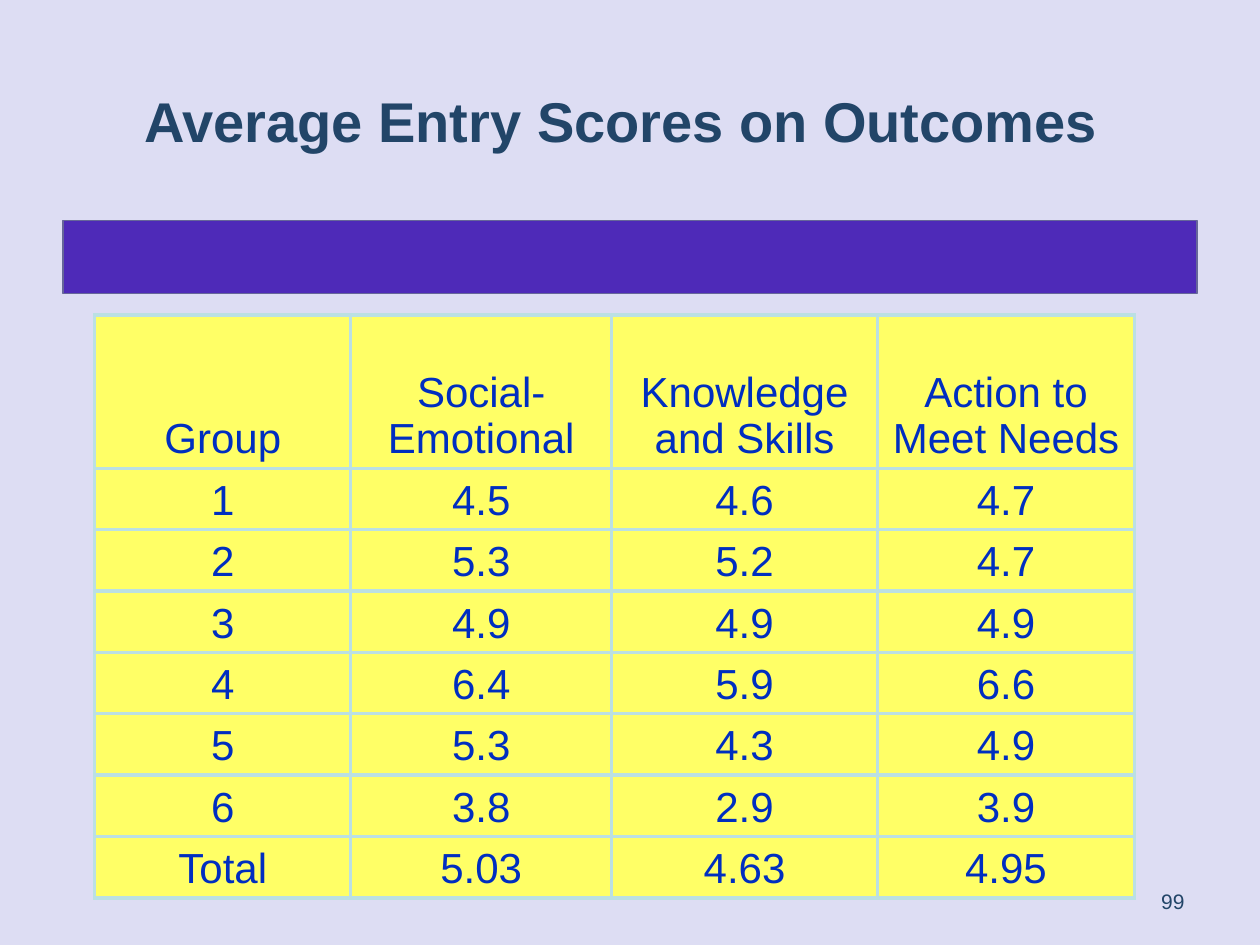
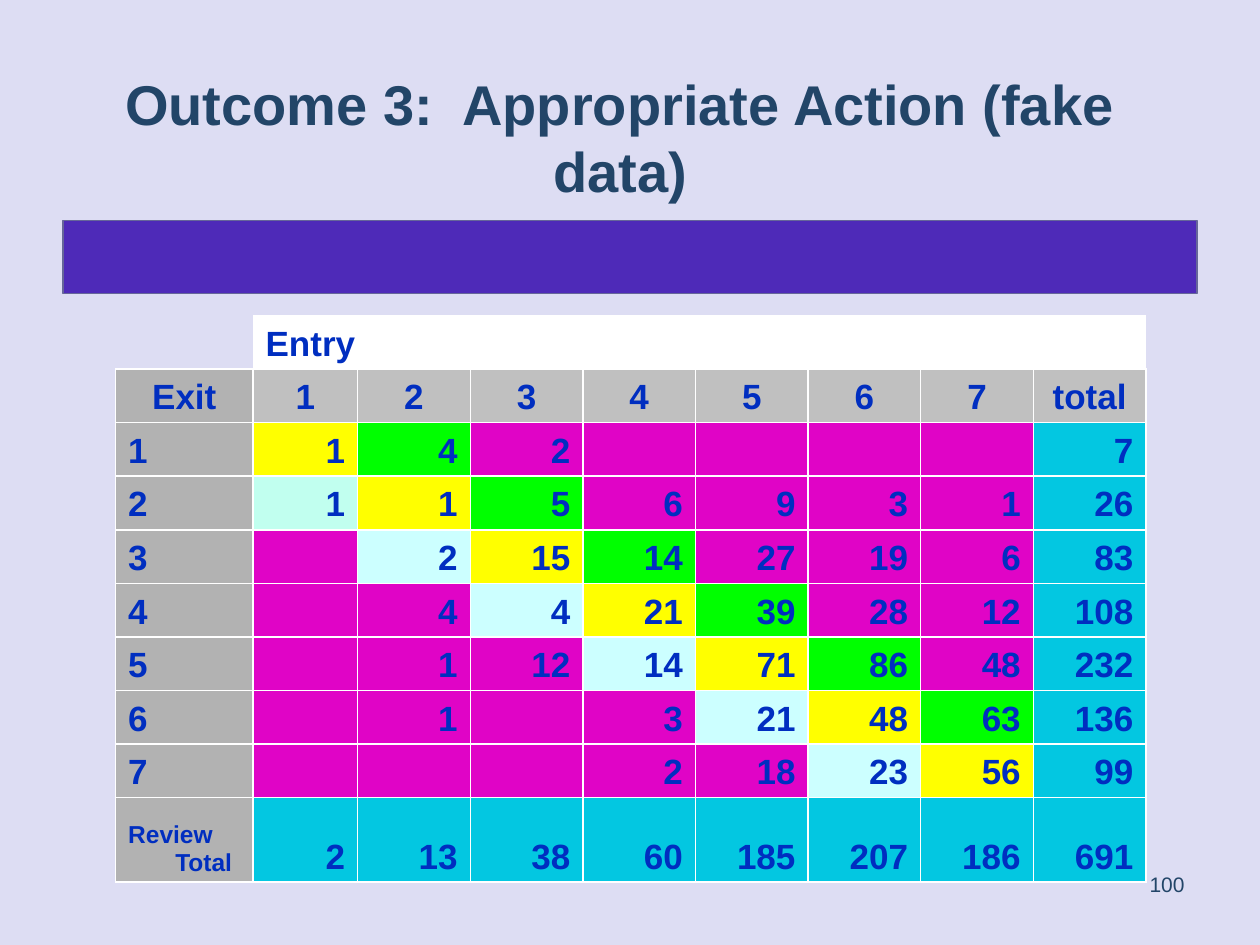
import pptx
import pptx.dml.color
import pptx.enum.shapes
import pptx.enum.text
import pptx.oxml
import pptx.oxml.ns
import pptx.util

Cm, Pt = pptx.util.Cm, pptx.util.Pt
ALIGN = pptx.enum.text.PP_ALIGN
ANCHOR = pptx.enum.text.MSO_ANCHOR

COLORS = {
    "background": "DDDDF3", "band": "4E2AB8", "band line": "666699",
    "title": "224568", "table text": "002EC0", "white": "FFFFFF",
    "score": "FFFF66", "score border": "BBE0E3",
    "exit label": "B2B2B2", "entry label": "C0C0C0", "total": "03C7E1",
    "same": "FFFF00", "one lower": "00FF00", "one higher": "CCFFFF",
    "lowest pair": "C1FFEF", "far apart": "E004C6",
}
FONT = "Arial"

SCORES = [
    ["Group", "Social-Emotional", "Knowledge\nand Skills", "Action to\nMeet Needs"],
    ["1", "4.5", "4.6", "4.7"],
    ["2", "5.3", "5.2", "4.7"],
    ["3", "4.9", "4.9", "4.9"],
    ["4", "6.4", "5.9", "6.6"],
    ["5", "5.3", "4.3", "4.9"],
    ["6", "3.8", "2.9", "3.9"],
    ["Total", "5.03", "4.63", "4.95"],
]
ENTRY_BY_EXIT = [
    [""] * 9,
    ["", "Entry"] + [""] * 7,
    ["Exit", "1", "2", "3", "4", "5", "6", "7", "total"],
    ["1", "1", "4", "2", "", "", "", "", "7"],
    ["2", "1", "1", "5", "6", "9", "3", "1", "26"],
    ["3", "", "2", "15", "14", "27", "19", "6", "83"],
    ["4", "", "4", "4", "21", "39", "28", "12", "108"],
    ["5", "", "1", "12", "14", "71", "86", "48", "232"],
    ["6", "", "1", "", "3", "21", "48", "63", "136"],
    ["7", "", "", "", "2", "18", "23", "56", "99"],
    ["Review Total", "2", "13", "38", "60", "185", "207", "186", "691"],
]
HEADER_ROW = 2
TOTAL_ROW, TOTAL_COL = 10, 8


def rgb(name):
    return pptx.dml.color.RGBColor.from_string(COLORS[name])


def style_paragraphs(frame, size, color, align, bold=False):
    for paragraph in frame.paragraphs:
        paragraph.alignment = align
        for run in paragraph.runs:
            run.font.name = FONT
            run.font.size = Pt(size)
            run.font.bold = bold
            run.font.color.rgb = rgb(color)


def prepare_layout(prs):
    """Put the background and the band on the title-only layout."""
    layout = prs.slide_layouts[5]
    fill = prs.slide_master.background.fill
    fill.solid()
    fill.fore_color.rgb = rgb("background")
    return layout


def add_band(slide, layout):
    """Draw the band, then hand it to the layout for every slide to share."""
    band = slide.shapes.add_shape(pptx.enum.shapes.MSO_SHAPE.RECTANGLE,
                                  Cm(1.27), Cm(4.45), Cm(22.86), Cm(1.47))
    band.shadow.inherit = False
    band.fill.solid()
    band.fill.fore_color.rgb = rgb("band")
    band.line.color.rgb = rgb("band line")
    band.line.width = Pt(0.75)
    layout.shapes.element.insert(2, band.element)


def set_title(slide, text, left, width, height, anchor):
    title = slide.shapes.title
    title.left, title.top = Cm(left), Cm(1.27)
    title.width, title.height = Cm(width), Cm(height)
    frame = title.text_frame
    frame.text = text
    frame.word_wrap = True
    frame.auto_size = pptx.enum.text.MSO_AUTO_SIZE.NONE
    frame.vertical_anchor = anchor
    style_paragraphs(frame, 32, "title", ALIGN.CENTER, bold=True)


def add_page_number(slide, number, left, top, width, height, anchor):
    frame = slide.shapes.add_textbox(Cm(left), Cm(top), Cm(width), Cm(height)).text_frame
    frame.word_wrap = True
    frame.text = number
    frame.vertical_anchor = anchor
    style_paragraphs(frame, 12, "title", ALIGN.RIGHT)


def add_plain_table(slide, left, top, col_widths, row_heights):
    table = slide.shapes.add_table(
        len(row_heights), len(col_widths), Cm(left), Cm(top),
        Cm(sum(col_widths)), Cm(sum(row_heights))).table
    table.first_row = table.horz_banding = False
    for column, width in zip(table.columns, col_widths):
        column.width = Cm(width)
    for row, height in zip(table.rows, row_heights):
        row.height = Cm(height)
    return table


def set_borders(cell, color, width, sides="LRTB"):
    """Line the given sides and clear the others."""
    properties = cell._tc.get_or_add_tcPr()
    for side in "LRTB":
        paint = "<a:noFill/>"
        if side in sides:
            paint = f'<a:solidFill><a:srgbClr val="{COLORS[color]}"/></a:solidFill>'
        properties.append(pptx.oxml.parse_xml(
            f'<a:ln{side} {pptx.oxml.ns.nsdecls("a")} w="{Pt(width)}">{paint}</a:ln{side}>'))


def fill_cell(cell, text, fill, size, align, bold=False):
    cell.text_frame.text = text
    cell.vertical_anchor = ANCHOR.BOTTOM
    cell.margin_top = cell.margin_bottom = Cm(0.11)
    if fill:
        cell.fill.solid()
        cell.fill.fore_color.rgb = rgb(fill)
    else:
        cell.fill.background()
    style_paragraphs(cell.text_frame, size, "table text", align, bold)


def hang_indent(cell):
    for paragraph in cell.text_frame.paragraphs:
        properties = paragraph._p.get_or_add_pPr()
        properties.set("marL", str(Cm(0.95)))
        properties.set("indent", str(-Cm(0.95)))


def add_score_table(slide):
    table = add_plain_table(slide, 1.91, 6.35, [5.16, 5.26, 5.36, 5.18],
                            [3.09] + [1.2] * 7)
    for r, row in enumerate(SCORES):
        for c, text in enumerate(row):
            cell = table.cell(r, c)
            set_borders(cell, "score border", 2.25)
            fill_cell(cell, text, "score", 24, ALIGN.CENTER)


def crosstab_fill(r, c):
    """Colour a cell by how far the exit rating lies from the entry rating."""
    if r < HEADER_ROW:
        return "white" if r == 1 and c > 0 else None
    if c == 0:
        return "exit label"
    if r == HEADER_ROW:
        return "entry label"
    if r == TOTAL_ROW or c == TOTAL_COL:
        return "total"
    exit_rating = r - HEADER_ROW
    if (exit_rating, c) == (2, 1):
        return "lowest pair"
    return {0: "same", 1: "one lower", -1: "one higher"}.get(c - exit_rating, "far apart")


def crosstab_align(r, c):
    if r == HEADER_ROW:
        return ALIGN.CENTER
    return ALIGN.LEFT if r < HEADER_ROW or c == 0 else ALIGN.RIGHT


def add_crosstab(slide):
    table = add_plain_table(slide, 2.33, 5.28, [2.77, 2.11] + [2.27] * 7,
                            [1.08] * 10 + [1.7])
    for r, row in enumerate(ENTRY_BY_EXIT):
        for c, text in enumerate(row):
            cell = table.cell(r, c)
            set_borders(cell, "white", 1, ["", "B"][r] if r < HEADER_ROW else "LRTB")
            size = 14 if r == TOTAL_ROW and c == 0 else 20
            fill_cell(cell, text, crosstab_fill(r, c), size, crosstab_align(r, c), bold=True)
            if text:
                hang_indent(cell)
    table.cell(0, 0).merge(table.cell(0, 1))
    table.cell(1, 1).merge(table.cell(1, 2))


def main():
    prs = pptx.Presentation()
    prs.slide_width, prs.slide_height = Cm(25.4), Cm(19.05)
    layout = prepare_layout(prs)

    scores = prs.slides.add_slide(layout)
    add_band(scores, layout)
    add_page_number(scores, "99", 18.21, 17.65, 5.92, 1.02, ANCHOR.MIDDLE)
    set_title(scores, "Average Entry Scores on Outcomes", 1.91, 21.23, 2.31, ANCHOR.MIDDLE)
    add_score_table(scores)

    crosstab = prs.slides.add_slide(layout)
    add_crosstab(crosstab)
    set_title(crosstab, "Outcome 3:  Appropriate Action (fake data)", 1.07, 22.86, 1.63,
              ANCHOR.TOP)
    add_page_number(crosstab, "100", 20.32, 16.94, 3.81, 1.27, ANCHOR.BOTTOM)

    prs.save("out.pptx")


if __name__ == "__main__":
    main()
